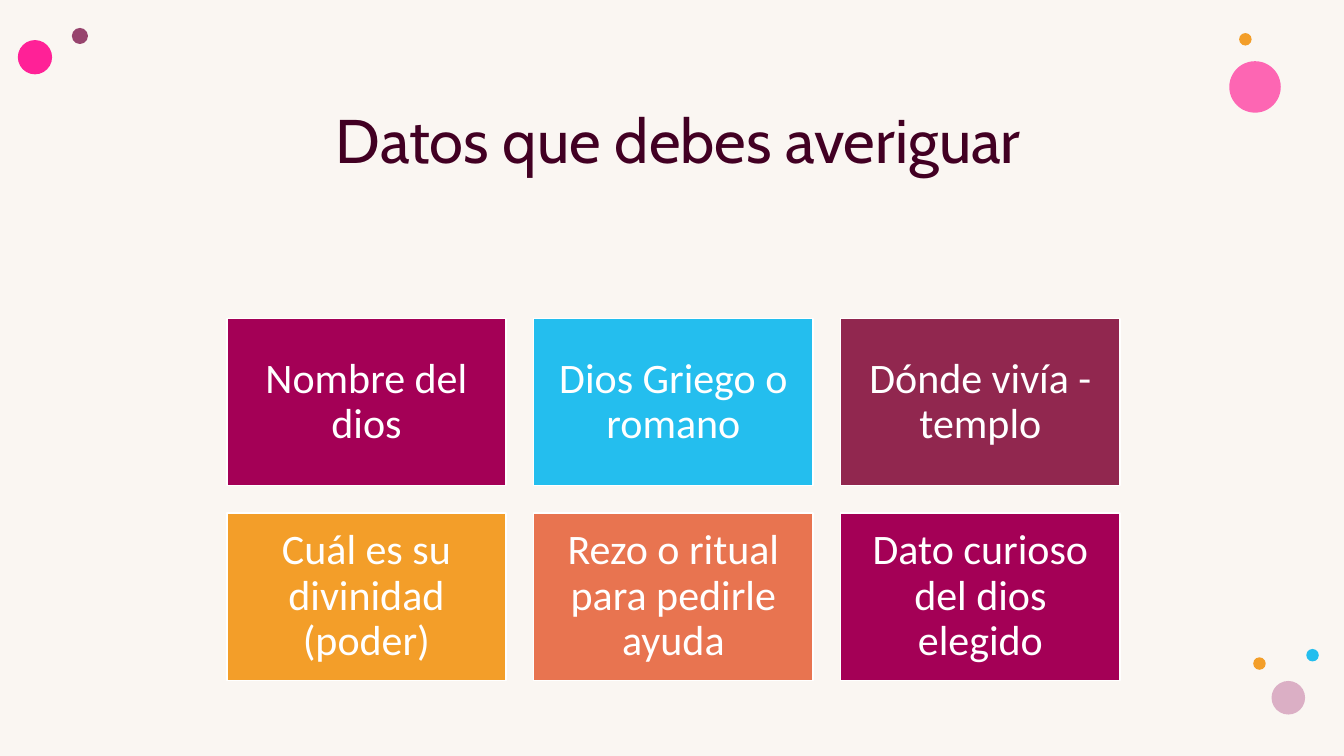
from lxml.etree import SubElement
from pptx import Presentation
from pptx.dml.color import RGBColor
from pptx.enum.shapes import MSO_SHAPE
from pptx.enum.text import MSO_ANCHOR, PP_ALIGN
from pptx.oxml.ns import qn
from pptx.util import Inches, Pt

CREAM = RGBColor(0xFA, 0xF6, 0xF2)
WHITE = RGBColor(0xFF, 0xFF, 0xFF)
PLUM = RGBColor(0x42, 0x00, 0x23)
MAGENTA = RGBColor(0xA4, 0x00, 0x56)
WINE = RGBColor(0x91, 0x27, 0x4F)
SKY = RGBColor(0x24, 0xBE, 0xEE)
AMBER = RGBColor(0xF3, 0x9E, 0x29)
CORAL = RGBColor(0xE8, 0x74, 0x50)
MAUVE = RGBColor(0x97, 0x44, 0x6E)
ROSE = RGBColor(0xFF, 0x2F, 0x9C)
PINK = RGBColor(0xFF, 0x21, 0x97)
LILAC = RGBColor(0xDB, 0xAF, 0xC5)

# Centre, as percent of the slide; diameter, as percent of its width
DOTS = [
    (5.95, 4.76, 1.2, MAUVE, 100),
    (93.38, 11.5, 3.83, ROSE, 72),
    (92.66, 5.2, 0.93, AMBER, 100),
    (2.6, 7.57, 2.55, PINK, 100),
    (97.66, 86.67, 0.93, SKY, 100),
    (95.86, 92.3, 2.5, LILAC, 100),
    (93.71, 87.77, 0.93, AMBER, 100),
]
CARDS = [
    ("Nombre del dios", MAGENTA),
    ("Dios Griego o romano", SKY),
    ("Dónde vivía - templo", WINE),
    ("Cuál es su divinidad (poder)", AMBER),
    ("Rezo o ritual para pedirle ayuda", CORAL),
    ("Dato curioso del dios elegido", MAGENTA),
]
CARD_COLUMNS = 3


def write(frame, text, *, font, size, color, anchor, inset):
    frame.word_wrap = True
    frame.vertical_anchor = anchor
    frame.margin_left = frame.margin_right = Inches(inset)
    frame.margin_top = frame.margin_bottom = Inches(inset)
    para = frame.paragraphs[0]
    para.alignment = PP_ALIGN.CENTER
    para.line_spacing = 0.9
    span = para.add_run()
    span.text = text
    span.font.name = font
    span.font.size = Pt(size)
    span.font.color.rgb = color


class Deck:
    heading_font = "Cabin"
    body_font = "Calibri"

    def __init__(self):
        self.file = Presentation()
        self.file.slide_width = Inches(13.33)
        self.file.slide_height = Inches(7.5)
        self.page = self.file.slides.add_slide(self.file.slide_layouts[5])
        self.page.background.fill.solid()
        self.page.background.fill.fore_color.rgb = CREAM

    def across(self, percent):
        return round(self.file.slide_width * percent / 100)

    def down(self, percent):
        return round(self.file.slide_height * percent / 100)

    def title(self, text):
        box = self.page.shapes.title
        box.left, box.top = self.across(6.3), self.down(13.87)
        box.width, box.height = self.across(88.37), self.down(26.27)
        write(box.text_frame, text, font=self.heading_font, size=44,
              color=PLUM, anchor=MSO_ANCHOR.TOP, inset=0.05)

    def shape(self, kind, left, top, width, height, color):
        shape = self.page.shapes.add_shape(kind, left, top, width, height)
        shape.shadow.inherit = False
        shape.fill.solid()
        shape.fill.fore_color.rgb = color
        return shape

    def dot(self, x, y, diameter, color, opacity):
        size = self.across(diameter)
        dot = self.shape(MSO_SHAPE.OVAL, self.across(x) - size // 2,
                         self.down(y) - size // 2, size, size, color)
        dot.line.fill.background()
        if opacity < 100:
            tint = dot.fill._xPr.find(".//" + qn("a:srgbClr"))
            SubElement(tint, qn("a:alpha"), val=str(opacity * 1000))

    def card(self, column, row, text, color):
        card = self.shape(MSO_SHAPE.RECTANGLE,
                          self.across(16.88 + 22.84 * column),
                          self.down(42.13 + 25.73 * row),
                          self.across(20.78), self.down(22.13), color)
        card.line.color.rgb = WHITE
        card.line.width = Pt(1)
        write(card.text_frame, text, font=self.body_font, size=30,
              color=WHITE, anchor=MSO_ANCHOR.MIDDLE, inset=0.12)


def main():
    deck = Deck()
    for dot in DOTS:
        deck.dot(*dot)
    deck.title("Datos que debes averiguar")
    for index, (text, color) in enumerate(CARDS):
        row, column = divmod(index, CARD_COLUMNS)
        deck.card(column, row, text, color)
    deck.file.save("out.pptx")


if __name__ == "__main__":
    main()
